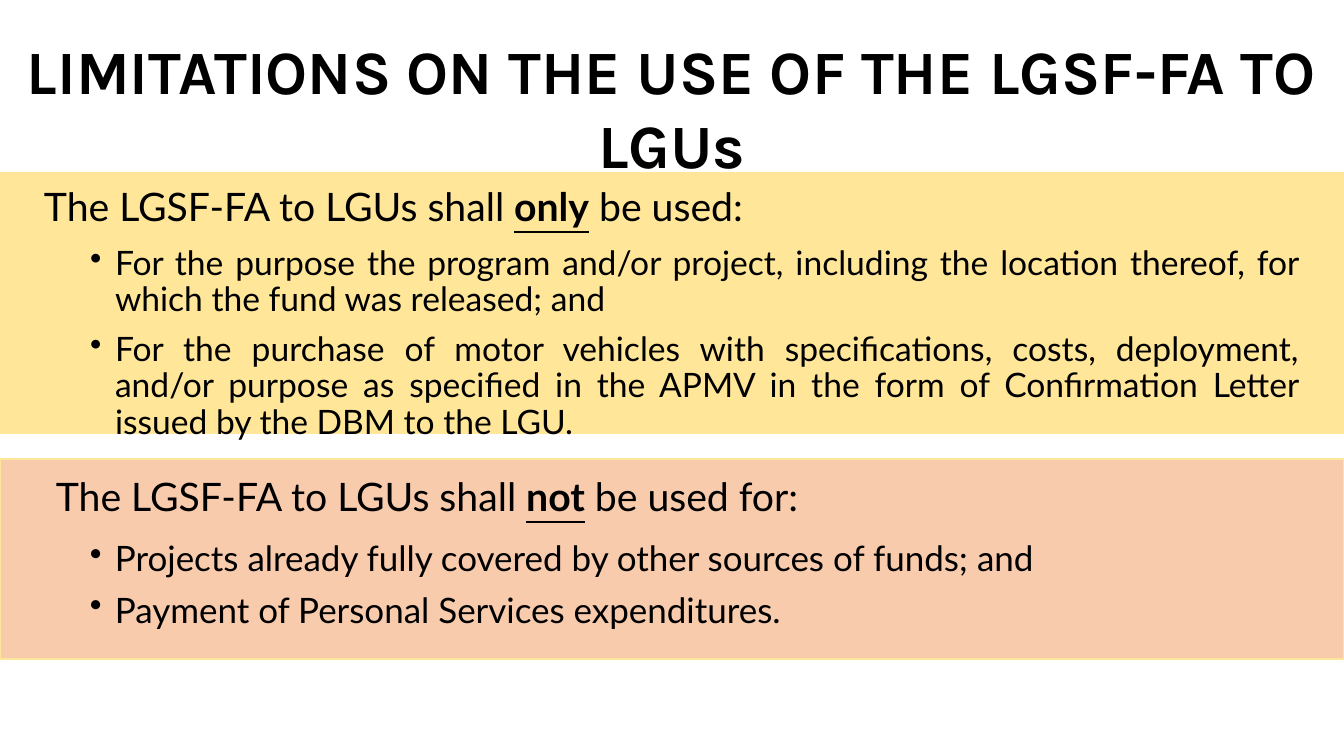
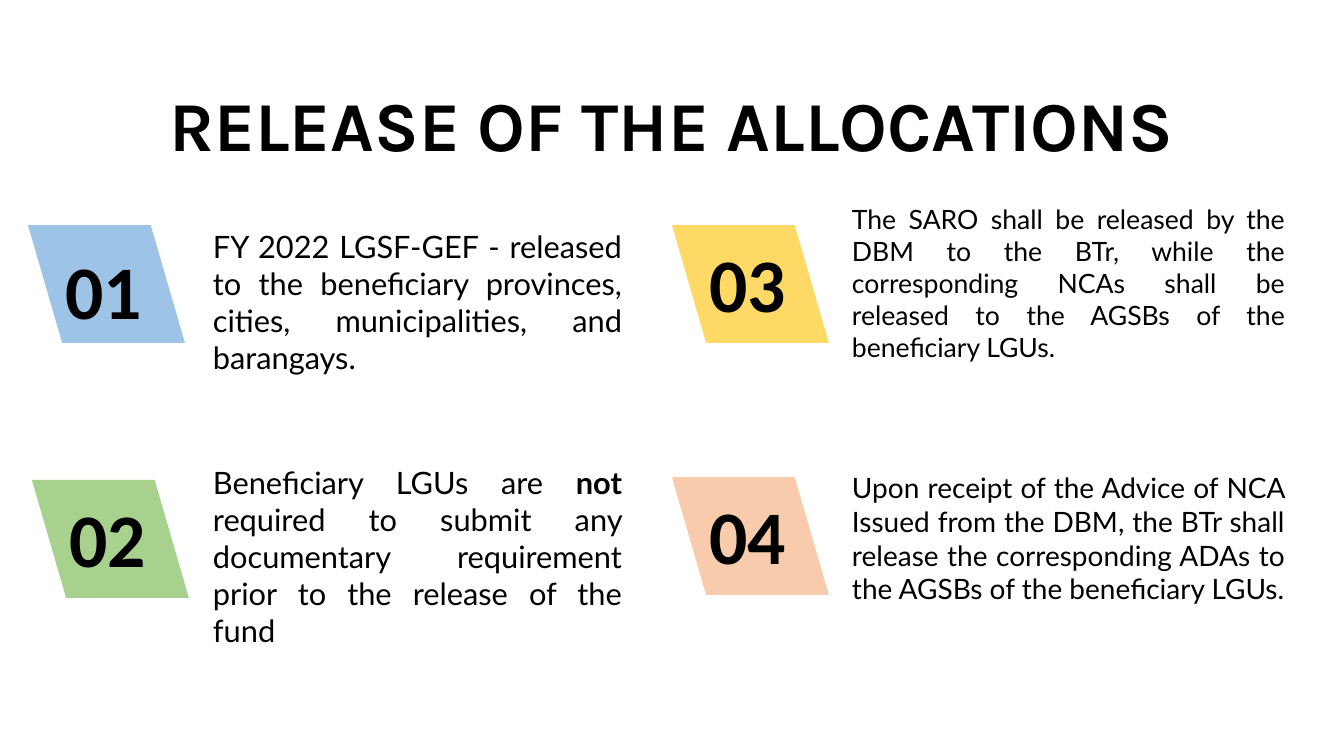
import dataclasses

import pptx
import pptx.dml.color
import pptx.enum.shapes
import pptx.enum.text
import pptx.oxml
import pptx.oxml.ns
import pptx.util

ALIGN = pptx.enum.text.PP_ALIGN
ANCHOR = pptx.enum.text.MSO_ANCHOR
AUTO_SIZE = pptx.enum.text.MSO_AUTO_SIZE
SHAPE = pptx.enum.shapes.MSO_SHAPE


@dataclasses.dataclass(frozen=True)
class Theme:
    black: str = "000000"
    white: str = "FFFFFF"
    cream: str = "FFE699"
    peach: str = "F8CBAD"
    blue: str = "9DC3E6"
    green: str = "A9D18E"
    gold: str = "FFD966"
    title_font: str = "Karla"
    body_font: str = "Lato"
    number_font: str = "Calibri"
    lead_size: int = 28
    number_size: int = 54


theme = Theme()
rgb = pptx.dml.color.RGBColor.from_string


def px(*lengths):
    return [round(length * 914400 / 100.8) for length in lengths]


def write(shape, *texts, size, font=theme.body_font, bold=False, underline=False,
          align=ALIGN.JUSTIFY, anchor=ANCHOR.TOP, insets=(10, 5, 10, 5), wrap=True,
          auto_size=AUTO_SIZE.NONE, line_spacing=None, space_before=0,
          indent=(0, 0), bullet=None):
    frame = shape.text_frame
    frame.word_wrap = wrap
    frame.auto_size = auto_size
    frame.vertical_anchor = anchor
    (frame.margin_left, frame.margin_top,
     frame.margin_right, frame.margin_bottom) = px(*insets)
    for index, text in enumerate(texts):
        paragraph = frame.add_paragraph() if index else frame.paragraphs[0]
        properties = paragraph._p.get_or_add_pPr()
        left, hanging = px(*indent)
        properties.set("marL", str(left))
        properties.set("indent", str(hanging))
        if bullet:
            mark = pptx.oxml.parse_xml(
                f'<a:buChar {pptx.oxml.ns.nsdecls("a")} char="{bullet}"/>')
            properties.append(mark)
        paragraph.alignment = align
        if line_spacing:
            paragraph.line_spacing = line_spacing
        paragraph.space_before = pptx.util.Pt(space_before if index else 0)
        for part, words in enumerate(text.split("*")):
            emphasised = part % 2 == 1
            run = paragraph.add_run()
            run.text = words
            run.font.name = font
            run.font.size = pptx.util.Pt(size)
            run.font.bold = bold or emphasised
            run.font.underline = underline and emphasised
            run.font.color.rgb = rgb(theme.black)


presentation = pptx.Presentation()
presentation.slide_width, presentation.slide_height = px(1344, 756)

slides = []
for text, size, box in [
    ("LIMITATIONS ON THE USE OF THE LGSF-FA TO LGUs", 44, (0, 48, 1344, 117)),
    ("RELEASE OF THE ALLOCATIONS", 50, (17, 55, 1310, 137)),
]:
    slide = presentation.slides.add_slide(presentation.slide_layouts[5])
    title = slide.shapes.title
    title.left, title.top, title.width, title.height = px(*box)
    write(title, text, size=size, font=theme.title_font, bold=True,
          align=ALIGN.CENTER, anchor=ANCHOR.MIDDLE, insets=(7, 4, 7, 4))
    slides.append(slide)
limitations, release = slides
limitations.shapes.title.fill.solid()
limitations.shapes.title.fill.fore_color.rgb = rgb(theme.white)

rules = [
    (theme.cream, (0, 173, 1344, 260),
     "The LGSF-FA to LGUs shall *only* be used:", (29, 183, 1262, 55),
     ["For the purpose the program and/or project, including the location thereof, "
      "for which the fund was released; and",
      "For the purchase of motor vehicles with specifications, costs, deployment, "
      "and/or purpose as specified in the APMV in the form of Confirmation Letter "
      "issued by the DBM to the LGU."], 24, (75, 241, 1234, 188)),
    (theme.peach, (0, 459, 1344, 200),
     "The LGSF-FA to LGUs shall *not* be used for:", (41, 473, 1262, 55),
     ["Projects already fully covered by other sources of funds; and",
      "Payment of Personal Services expenditures."], 25, (75, 536, 1218, 123)),
]
for colour, band_box, lead, lead_box, items, item_size, items_box in rules:
    band = limitations.shapes.add_shape(SHAPE.RECTANGLE, *px(*band_box))
    band.shadow.inherit = False
    band.fill.solid()
    band.fill.fore_color.rgb = rgb(colour)
    band.line.color.rgb = rgb(theme.cream)
    band.line.width = pptx.util.Pt(1)
    write(limitations.shapes.add_textbox(*px(*lead_box)), lead,
          size=theme.lead_size, underline=True, line_spacing=0.9, indent=(5, 0))
    write(limitations.shapes.add_textbox(*px(*items_box)), *items,
          size=item_size, line_spacing=0.9, space_before=10,
          indent=(30, -25), bullet="•")

steps = [
    (theme.blue, (28, 225), 14, (213, 223, 409, 122), 22,
     "FY 2022 LGSF-GEF - released to the beneficiary provinces, cities, "
     "municipalities, and barangays."),
    (theme.green, (32, 480), 0, (213, 459, 409, 159), 22,
     "Beneficiary LGUs are *not* required to submit any documentary requirement "
     "prior to the release of the fund"),
    (theme.gold, (672, 225), 0, (852, 198, 433, 139), 19,
     "The SARO shall be released by the DBM to the BTr, while the corresponding "
     "NCAs shall be released to the AGSBs of the beneficiary LGUs."),
    (theme.peach, (672, 477), 0, (852, 466, 433, 146), 20,
     "Upon receipt of the Advice of NCA Issued from the DBM, the BTr shall release "
     "the corresponding ADAs to the AGSBs of the beneficiary LGUs."),
]
for number, (colour, corner, drop, text_box, size, text) in enumerate(steps, 1):
    badge = release.shapes.add_shape(SHAPE.PARALLELOGRAM, *px(*corner, 157, 118))
    badge.adjustments[0] = 0.29
    badge._element.spPr.xfrm.set("flipH", "1")
    badge.shadow.inherit = False
    badge.fill.solid()
    badge.fill.fore_color.rgb = rgb(colour)
    badge.line.fill.background()
    write(badge, f"{number:02}", size=theme.number_size, font=theme.number_font,
          bold=True, align=ALIGN.CENTER, anchor=ANCHOR.MIDDLE,
          insets=(0, drop, 6, 4), wrap=False)
    write(release.shapes.add_textbox(*px(*text_box)), text, size=size,
          insets=(0, 5, 0, 5), auto_size=AUTO_SIZE.SHAPE_TO_FIT_TEXT)

presentation.save("out.pptx")
